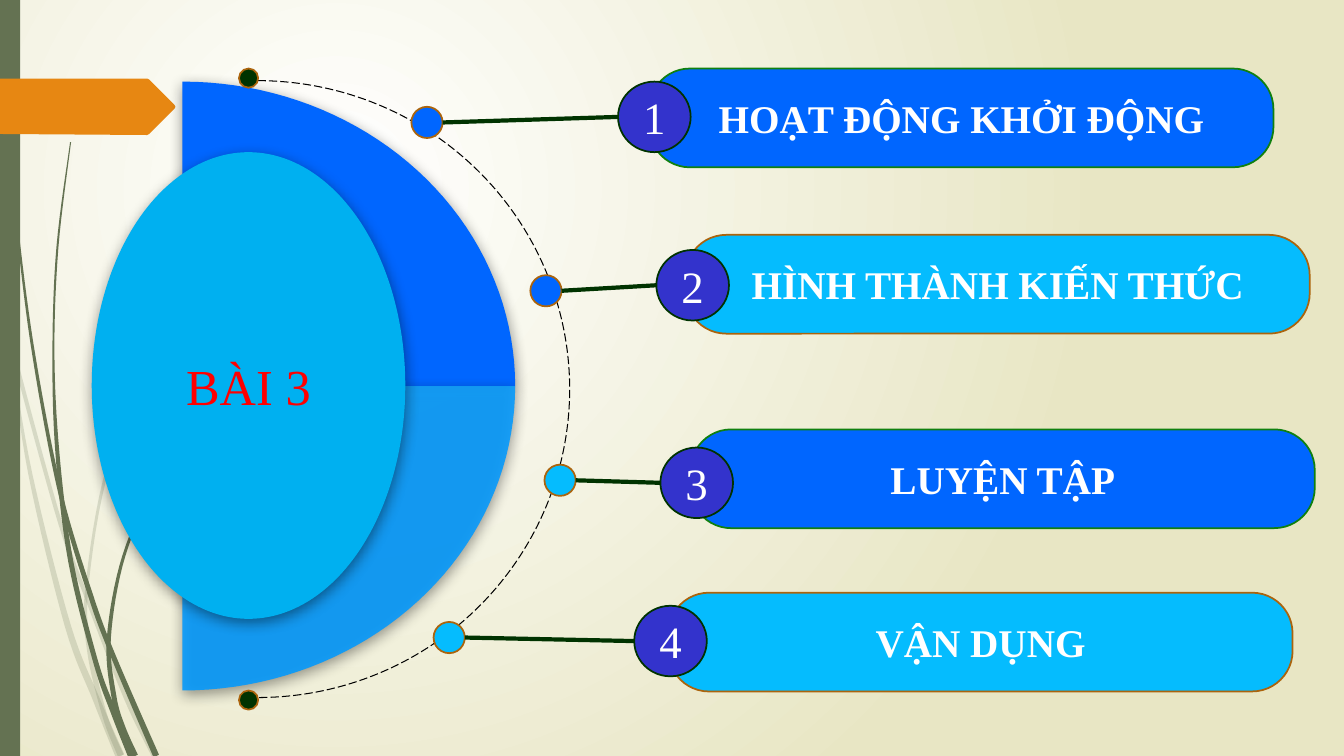
from math import cos, hypot, pi, sin

from lxml import etree
from pptx import Presentation, util as u
from pptx.dml.color import RGBColor
from pptx.enum import shapes, text
from pptx.oxml.ns import qn

FONT = "Times New Roman"
BLUE, SKY, GREEN, BROWN = "0066FF", "05BCFE", "003300", "AB640D"
OLIVE = "647252"
LESSON = "BÀI 3"
# label, fill, outline, bar corner, badge corner, dot corner
STEPS = [
    ("HOẠT ĐỘNG KHỞI ĐỘNG", BLUE, "108010", (6.44, 0.68), (6.13, 0.81), (4.08, 1.06)),
    ("HÌNH THÀNH KIẾN THỨC", SKY, BROWN, (6.8, 2.33), (6.51, 2.48), (5.26, 2.73)),
    ("LUYỆN TẬP", BLUE, "108010", (6.85, 4.26), (6.55, 4.44), (5.4, 4.61)),
    ("VẬN DỤNG", SKY, BROWN, (6.63, 5.88), (6.29, 6.01), (4.3, 6.17)),
]
DOT_FILLS = [BLUE, BLUE, SKY, SKY]
BAR, BADGE, DOT, END_DOT = (6.19, 0.98), (0.72, 0.7), (0.31, 0.31), (0.19, 0.19)
PIE_CENTRE, PIE_RADII = (1.81, 3.83), (3.3, 3.02)
PIE = [(BLUE, 100, -1), ("0099FF", 87, 1)]
# opacity, then centre line of each blade with its width at every point
BLADES = [
    (20, [(0, 2.9, 0.05), (0.16, 3.6, 0.04), (0.6, 5.2, 0.04), (0.9, 6.03, 0.04),
          (1.25, 6.93, 0.04), (1.53, 7.5, 0.05)]),
    (20, [(0.11, 3.5, 0.01), (0.3, 4.7, 0.04), (0.67, 6.2, 0.06), (0.96, 6.95, 0.07),
          (1.19, 7.5, 0.09)]),
    (20, [(3.12, 1.53, 0.01), (2.28, 2.44, 0.02), (1.59, 3.48, 0.03), (1.08, 4.61, 0.03),
          (0.86, 5.85, 0.03), (0.89, 6.46, 0.05), (1.04, 7.1, 0.05), (1.2, 7.5, 0.06)]),
    (100, [(0.04, 0, 0.01), (0.07, 1.1, 0.01), (0.18, 2.33, 0.02), (0.34, 3.55, 0.03),
           (0.6, 4.9, 0.04), (0.9, 5.91, 0.05), (1.12, 6.5, 0.05), (1.55, 7.5, 0.06)]),
    (100, [(0.7, 1.41, 0.01), (0.57, 2.45, 0.02), (0.53, 3.49, 0.02), (0.57, 4.5, 0.04),
           (0.7, 5.56, 0.05), (0.95, 6.57, 0.05), (1.13, 7.07, 0.06), (1.31, 7.5, 0.08)]),
    (100, [(2.6, 3.44, 0.01), (2.05, 4.05, 0.02), (1.57, 4.75, 0.02), (1.23, 5.51, 0.03),
           (1.08, 6.33, 0.04), (1.13, 6.91, 0.05), (1.22, 7.22, 0.05), (1.34, 7.5, 0.06)]),
]
SIGN = [(0, 0.78), (1.46, 0.78), (1.48, 0.79), (1.73, 1.04), (1.74, 1.06),
        (1.73, 1.08), (1.48, 1.33), (1.46, 1.34), (0, 1.33)]


def colour(value):
    return RGBColor.from_string(value)


def add_xml(parent, tag, **attributes):
    return etree.SubElement(parent, qn(tag), attributes)


def style(shape, fill, line=None, opacity=100, shadow=False):
    shape.shadow.inherit = False
    if fill:
        shape.fill.solid()
        shape.fill.fore_color.rgb = colour(fill)
    else:
        shape.fill.background()
    if line:
        shape.line.color.rgb = colour(line)
        shape.line.width = u.Pt(1.25)
    else:
        shape.line.fill.background()
    properties = shape._element.spPr
    if opacity < 100:
        paint = properties.find(qn("a:solidFill"))[0]
        add_xml(paint, "a:alpha", val=str(opacity * 1000))
    if shadow:
        outer = add_xml(properties.find(qn("a:effectLst")), "a:outerShdw",
                        blurRad=str(u.Pt(10)), dist=str(u.Pt(3)), dir=str(82 * 60000))
        add_xml(add_xml(outer, "a:srgbClr", val="000000"), "a:alpha", val="43000")
    return shape


def place(slide, kind, corner, size, fill, line=None, **look):
    preset = getattr(shapes.MSO_SHAPE, kind)
    shape = slide.shapes.add_shape(preset, *map(u.Inches, corner + size))
    return style(shape, fill, line, **look)


def write(shape, words, size, ink, bold=False):
    frame = shape.text_frame
    frame.text = words
    frame.word_wrap = True
    frame.vertical_anchor = text.MSO_ANCHOR.MIDDLE
    frame.margin_left = frame.margin_right = 0
    line = frame.paragraphs[0]
    line.alignment = text.PP_ALIGN.CENTER
    line.font.name, line.font.size, line.font.bold = FONT, u.Pt(size), bold
    line.font.color.rgb = colour(ink)


def outline(slide, points, fill, **look):
    points = [(u.Inches(x), u.Inches(y)) for x, y in points]
    builder = slide.shapes.build_freeform(*points[0], scale=1.0)
    builder.add_line_segments(points[1:], close=True)
    return style(builder.convert_to_shape(), fill, **look)


def smooth(points, steps=8):
    ends = [points[0], *points, points[-1]]
    curve = []
    for a, b, c, d in zip(ends, ends[1:], ends[2:], ends[3:]):
        for t in (i / steps for i in range(steps)):
            curve.append([(2 * q + (r - p) * t + (2 * p - 5 * q + 4 * r - s) * t ** 2
                           + (3 * q - p - 3 * r + s) * t ** 3) / 2
                          for p, q, r, s in zip(a, b, c, d)])
    return curve + [points[-1]]


def blade_edges(points):
    curve = smooth(points)
    left, right = [], []
    for i, (x, y, width) in enumerate(curve):
        before, after = curve[max(i - 1, 0)], curve[min(i + 1, len(curve) - 1)]
        dx, dy = after[0] - before[0], after[1] - before[1]
        half = width / 2 / hypot(dx, dy)
        left.append((x - dy * half, y + dx * half))
        right.append((x + dy * half, y - dx * half))
    return left + right[::-1]


def paint_background(slide):
    fill = slide.background.fill
    fill.gradient()
    for stop, shade in zip(fill.gradient_stops, ("FFFFFF", "E8E6C4")):
        stop.color.rgb = colour(shade)
    gradient = slide._element.xpath(".//a:gradFill")[0]
    gradient.remove(gradient.find(qn("a:lin")))
    circle = add_xml(gradient, "a:path", path="circle")
    add_xml(circle, "a:fillToRect", l="50000", t="50000", r="100000", b="100000")


def draw_half_disc(slide):
    (cx, cy), (rx, ry) = PIE_CENTRE, PIE_RADII
    for fill, opacity, side in PIE:
        rim = [(cx + rx * sin(i * pi / 80), cy + side * ry * cos(i * pi / 80))
               for i in range(41)]
        outline(slide, [PIE_CENTRE] + rim, fill, opacity=opacity, shadow=True)
    arc = place(slide, "ARC", (-0.54, 0.8), (6.19, 6.12), None, "000000")
    arc.adjustments[0], arc.adjustments[1] = 162, 54.165
    arc.line.width = u.Pt(0.75)
    arc.line.dash_style = 7
    for top in (0.68, 6.85):
        place(slide, "FLOWCHART_CONNECTOR", (2.37, top), END_DOT, GREEN, BROWN)


def draw_step(slide, number, step, dot_fill):
    label, fill, edge, bar_at, badge_at, dot_at = step
    bar = place(slide, "ROUNDED_RECTANGLE", bar_at, BAR, fill, edge)
    bar.adjustments[0] = 0.41
    write(bar, label, 28, "FFFFFF", bold=True)
    place(slide, "FLOWCHART_CONNECTOR", dot_at, DOT, dot_fill, BROWN)
    badge = place(slide, "FLOWCHART_CONNECTOR", badge_at, BADGE, "3333CC", GREEN)
    write(badge, str(number), 32, "FFFFFF")
    ends = (dot_at[0] + DOT[0], dot_at[1] + DOT[1] / 2,
            badge_at[0], badge_at[1] + BADGE[1] / 2)
    link = slide.shapes.add_connector(shapes.MSO_CONNECTOR.STRAIGHT, *map(u.Inches, ends))
    link.line.color.rgb = colour(GREEN)
    link.line.width = u.Pt(3)
    add_xml(link._element.spPr, "a:effectLst")


def main():
    """Build the lesson outline slide."""
    deck = Presentation()
    deck.slide_width, deck.slide_height = u.Inches(13.33), u.Inches(7.5)
    slide = deck.slides.add_slide(deck.slide_layouts[6])
    paint_background(slide)
    for opacity, points in BLADES:
        outline(slide, blade_edges(points), OLIVE, opacity=opacity)
    place(slide, "RECTANGLE", (0, 0), (0.2, 7.5), OLIVE)
    outline(slide, SIGN, "E78712")
    draw_half_disc(slide)
    for number, (step, dot_fill) in enumerate(zip(STEPS, DOT_FILLS), 1):
        draw_step(slide, number, step, dot_fill)
    lesson = place(slide, "FLOWCHART_CONNECTOR", (0.91, 1.51), (3.11, 4.63), "00B0F0",
                   shadow=True)
    write(lesson, LESSON, 36, "FF0000")
    deck.save("out.pptx")


if __name__ == "__main__":
    main()
